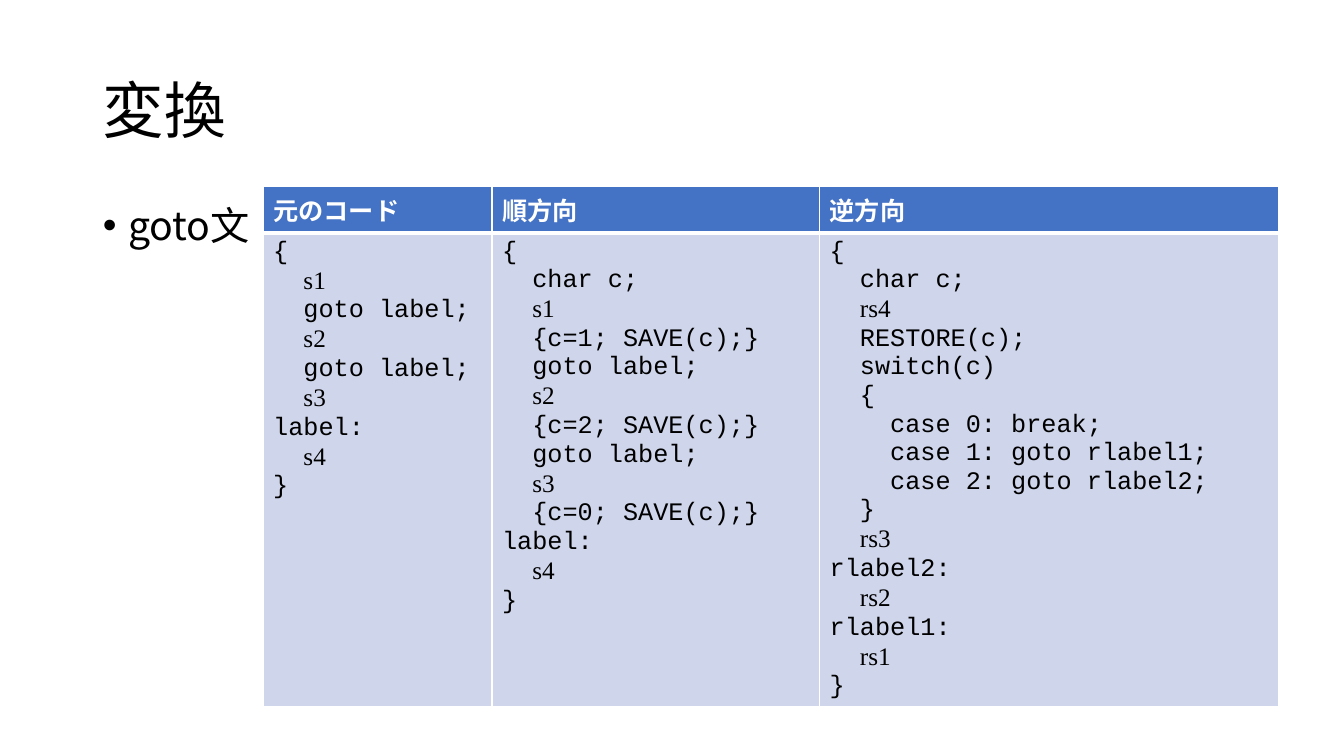
from lxml import etree
from pptx import Presentation
from pptx.dml.color import RGBColor
from pptx.enum.text import MSO_ANCHOR, PP_ALIGN
from pptx.oxml.ns import qn
from pptx.util import Inches, Pt

LEFT, MIDDLE, TOP = PP_ALIGN.LEFT, MSO_ANCHOR.MIDDLE, MSO_ANCHOR.TOP
COLORS = {"text": "000000", "white": "FFFFFF", "header": "4472C4", "body": "CFD5EA"}
SANS, MONO, SERIF = "Noto Sans CJK JP", "Courier New", "Times New Roman"

COLUMN_WIDTHS = [2.27, 3.25, 4.55]
ROW_HEIGHTS = [0.45, 4.7]
STATEMENTS = {prefix + str(n) for prefix in ("s", "rs") for n in range(1, 5)}
CODE = {
    "元のコード": """{
  s1
  goto label;
  s2
  goto label;
  s3
label:
  s4
}""",
    "順方向": """{
  char c;
  s1
  {c=1; SAVE(c);}
  goto label;
  s2
  {c=2; SAVE(c);}
  goto label;
  s3
  {c=0; SAVE(c);}
label:
  s4
}""",
    "逆方向": """{
  char c;
  rs4
  RESTORE(c);
  switch(c)
  {
    case 0: break;
    case 1: goto rlabel1;
    case 2: goto rlabel2;
  }
  rs3
rlabel2:
  rs2
rlabel1:
  rs1
}""",
}


def style_run(r, font, size, color="text", bold=False):
    r.font.name, r.font.size, r.font.bold = font, Pt(size), bold
    r.font.color.rgb = RGBColor.from_string(COLORS[color])
    if font == SANS:
        etree.SubElement(r._r.get_or_add_rPr(), qn("a:ea"), typeface=font)


def place(sp, left, top, width, height):
    sp.left, sp.top = Inches(left), Inches(top)
    sp.width, sp.height = Inches(width), Inches(height)


def fill_placeholder(sp, box, text, size, anchor):
    place(sp, *box)
    tf = sp.text_frame
    tf.text = text
    tf.vertical_anchor = anchor
    p = tf.paragraphs[0]
    p.alignment, p.line_spacing = LEFT, 0.9
    style_run(p.runs[0], SANS, size)
    return p


def add_bullet(p):
    p.space_before = Pt(10)
    pPr = p._p.get_or_add_pPr()
    pPr.set("marL", str(Inches(0.25)))
    pPr.set("indent", str(-Inches(0.25)))
    etree.SubElement(pPr, qn("a:buFont"), typeface="Arial")
    etree.SubElement(pPr, qn("a:buChar"), char="•")


def style_cell(cell, fill, top=1, bottom=1):
    tcPr = cell._tc.get_or_add_tcPr()
    for side, width in (("L", 1), ("R", 1), ("T", top), ("B", bottom)):
        ln = etree.SubElement(tcPr, qn("a:ln" + side), w=str(Pt(width)))
        solid = etree.SubElement(ln, qn("a:solidFill"))
        etree.SubElement(solid, qn("a:srgbClr"), val=COLORS["white"])
    cell.fill.solid()
    cell.fill.fore_color.rgb = RGBColor.from_string(COLORS[fill])


def write_code(tf, code):
    tf.text = code
    for p in tf.paragraphs:
        name = p.text.strip()
        if name in STATEMENTS:
            # Indent stays monospaced, the statement name is set in serif
            p.text = p.text.replace(name, "")
            p.add_run().text = name
        for r in p.runs:
            style_run(r, SERIF if r.text in STATEMENTS else MONO, 18)


def add_code_table(s, left, top):
    table = s.shapes.add_table(
        2, len(CODE), Inches(left), Inches(top),
        Inches(sum(COLUMN_WIDTHS)), Inches(sum(ROW_HEIGHTS))).table
    for row, height in zip(table.rows, ROW_HEIGHTS):
        row.height = Inches(height)
    for i, (heading, code) in enumerate(CODE.items()):
        table.columns[i].width = Inches(COLUMN_WIDTHS[i])
        header, body = table.cell(0, i), table.cell(1, i)
        header.text_frame.text = heading
        style_run(header.text_frame.paragraphs[0].runs[0], SANS, 18, "white", True)
        style_cell(header, "header", bottom=3)
        write_code(body.text_frame, code)
        style_cell(body, "body", top=3)


def main():
    prs = Presentation()
    prs.slide_width, prs.slide_height = Inches(13.33), Inches(7.5)
    s = prs.slides.add_slide(prs.slide_layouts[1])
    # Title and topic
    fill_placeholder(s.shapes.title, (0.92, 0.4, 11.5, 1.45), "変換", 44, MIDDLE)
    add_bullet(fill_placeholder(
        s.placeholders[1], (0.92, 2, 11.5, 4.76), "goto文", 28, TOP))
    # Code comparison
    add_code_table(s, 2.61, 1.85)
    prs.save("out.pptx")


if __name__ == "__main__":
    main()
